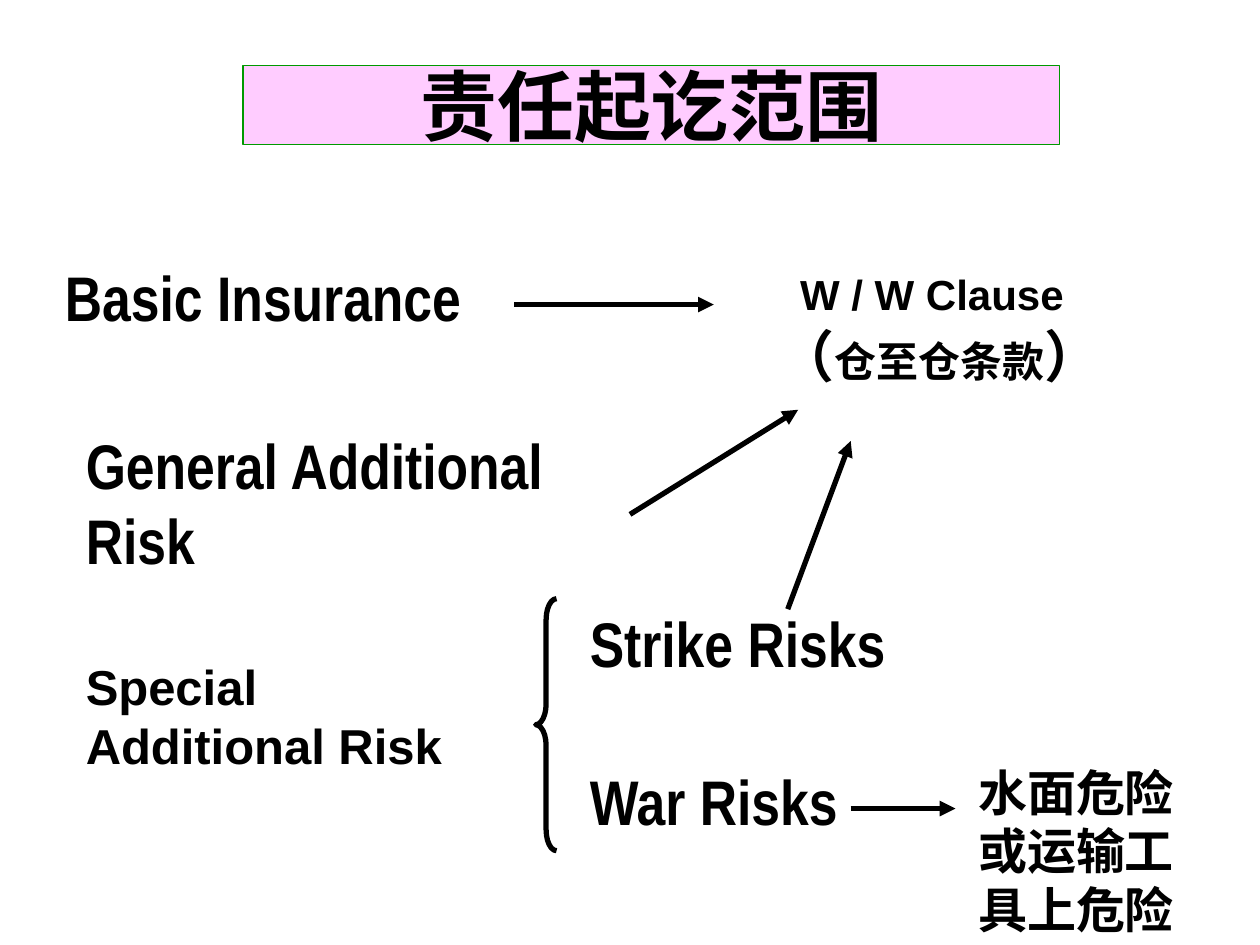
from typing import NamedTuple

from lxml.etree import SubElement
from pptx import Presentation
from pptx.dml.color import RGBColor
from pptx.enum.shapes import MSO_CONNECTOR as Connector, MSO_SHAPE as Shape
from pptx.enum.text import MSO_ANCHOR as Anchor, MSO_AUTO_SIZE as AutoSize, PP_ALIGN as Align
from pptx.oxml.ns import qn
from pptx.util import Cm, Pt

BLACK = RGBColor(0x00, 0x00, 0x00)
PINK = RGBColor(0xFF, 0xCC, 0xFF)
GREEN = RGBColor(0x00, 0x99, 0x00)

SANS = "Arial"
NARROW = "Arial Narrow"
LINE_WIDTH = Pt(3)


class Run(NamedTuple):
    text: str
    size: float
    font: str = NARROW


class Label(NamedTuple):
    """A text box; lengths in centimetres."""
    left: float
    top: float
    width: float
    height: float
    runs: tuple[Run, ...]


class Arrow(NamedTuple):
    """An arrow from start to end; lengths in centimetres."""
    start_x: float
    start_y: float
    end_x: float
    end_y: float


LABELS = [
    Label(1.06, 5.08, 9.53, 1.78, (Run("Basic Insurance", 36),)),
    Label(15.88, 5.29, 8.04, 1.27, (Run("W / W Clause", 24, SANS),)),
    Label(15.45, 6.35, 8.3, 1.6,
          (Run("（", 32), Run("仓至仓条款", 24, SANS), Run("）", 32))),
    Label(1.48, 8.47, 11.22, 3.3, (Run("General Additional Risk", 36),)),
    Label(11.64, 12.07, 6.56, 1.78, (Run("Strike Risks", 36),)),
    Label(11.64, 15.24, 5.72, 1.78, (Run("War Risks", 36),)),
    Label(19.47, 15.24, 5.29, 3.81, (Run("水面危险或运输工具上危险", 28),)),
    Label(1.48, 13.12, 8.47, 2.62, (Run("Special Additional Risk", 28, SANS),)),
]

ARROWS = [
    Arrow(10.37, 6.14, 14.39, 6.14),   # basic insurance to clause
    Arrow(12.7, 10.37, 16.09, 8.26),   # general risk to clause
    Arrow(15.88, 12.28, 17.15, 8.89),  # strike risks to clause
    Arrow(17.15, 16.3, 19.26, 16.3),   # war risks to their scope
]


def add_run(paragraph, text: str, *, size: float, font: str) -> None:
    run = paragraph.add_run()
    run.text = text
    run.font.size = Pt(size)
    run.font.name = font
    run.font.bold = True
    run.font.color.rgb = BLACK


def format_title(title) -> None:
    title.left, title.top, title.width, title.height = Cm(4.9), Cm(1.32), Cm(16.46), Cm(1.6)
    title.fill.solid()
    title.fill.fore_color.rgb = PINK
    title.line.color.rgb = GREEN
    title.line.width = Pt(0.75)
    frame = title.text_frame
    frame.auto_size = AutoSize.NONE
    frame.vertical_anchor = Anchor.MIDDLE
    paragraph = frame.paragraphs[0]
    paragraph.alignment = Align.CENTER
    add_run(paragraph, "责任起讫范围", size=44, font=SANS)


def add_label(slide, label: Label) -> None:
    box = slide.shapes.add_textbox(*(Cm(length) for length in label[:4]))
    frame = box.text_frame
    frame.word_wrap = True
    frame.auto_size = AutoSize.SHAPE_TO_FIT_TEXT
    for run in label.runs:
        add_run(frame.paragraphs[0], run.text, size=run.size, font=run.font)


def add_arrow(slide, arrow: Arrow) -> None:
    connector = slide.shapes.add_connector(
        Connector.STRAIGHT, *(Cm(length) for length in arrow))
    connector.line.color.rgb = BLACK
    connector.line.width = LINE_WIDTH
    properties = connector._element.spPr
    SubElement(properties.find(qn("a:ln")), qn("a:tailEnd"), type="triangle")
    SubElement(properties, qn("a:effectLst"))


def add_brace(slide) -> None:
    brace = slide.shapes.add_shape(
        Shape.LEFT_BRACE, Cm(10.8), Cm(12.07), Cm(0.42), Cm(5.08))
    brace.adjustments[0] = 1.0
    brace.adjustments[1] = 0.5
    brace.shadow.inherit = False
    brace.fill.background()
    brace.line.color.rgb = BLACK
    brace.line.width = LINE_WIDTH


def main() -> None:
    presentation = Presentation()
    presentation.slide_width, presentation.slide_height = Cm(25.4), Cm(19.05)
    title_only = presentation.slide_layouts[5]
    slide = presentation.slides.add_slide(title_only)

    format_title(slide.shapes.title)

    # Risks and the clause that covers them
    for label in LABELS:
        add_label(slide, label)
    for arrow in ARROWS:
        add_arrow(slide, arrow)

    # Special additional risk splits into strike and war
    add_brace(slide)

    presentation.save("out.pptx")


if __name__ == "__main__":
    main()
